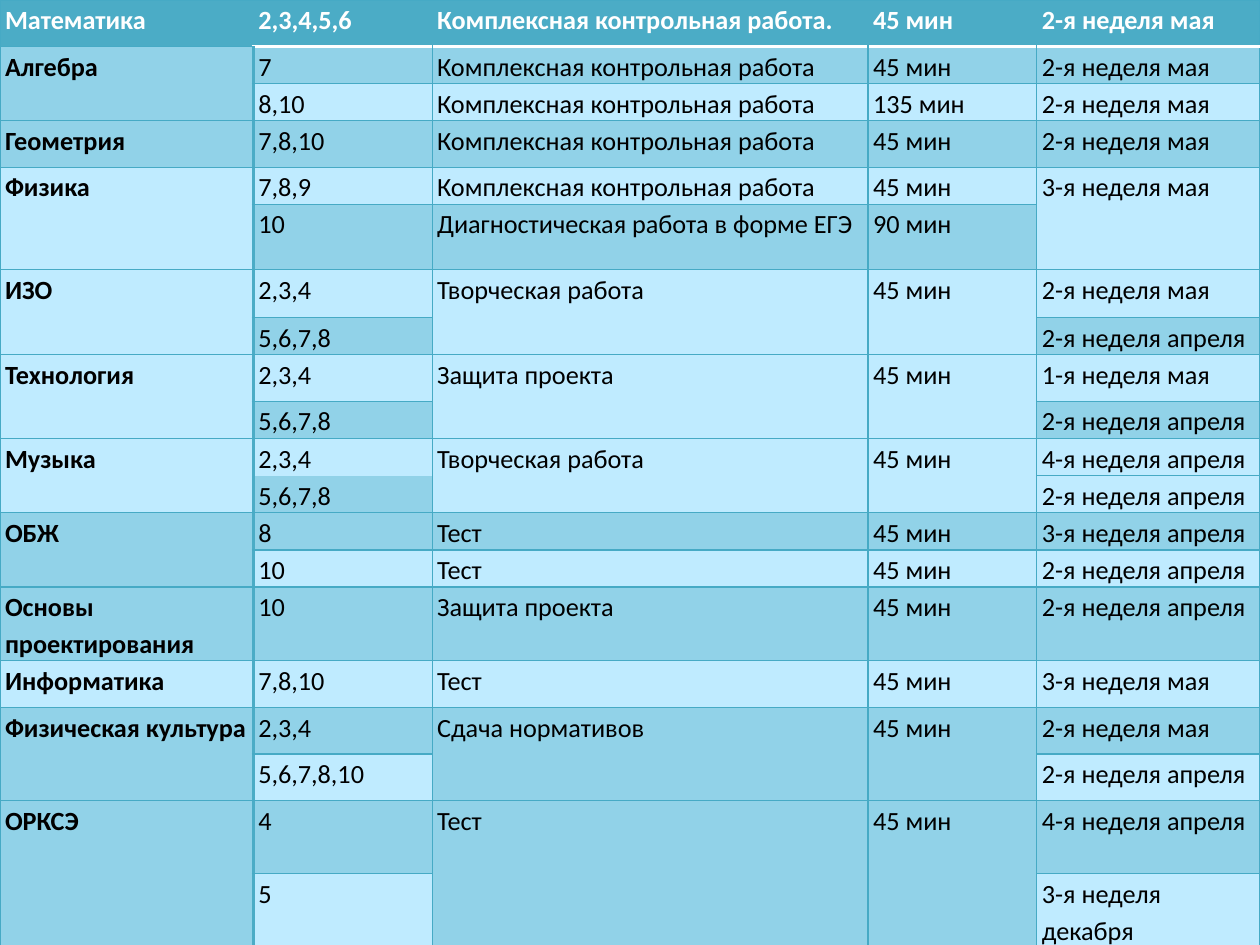
from lxml.etree import SubElement
from pptx import Presentation
from pptx.dml.color import RGBColor
from pptx.oxml.ns import qn
from pptx.util import Inches, Pt

COLUMN_WIDTHS = [2.01, 1.42, 3.46, 1.34, 1.77]
COMPLEX = "Комплексная контрольная работа"
CREATIVE = "Творческая работа"
PROJECT = "Защита проекта"
TEST = "Тест"
LESSON = "45 мин"
MAY_2, MAY_3 = "2-я неделя мая", "3-я неделя мая"
APRIL_2, APRIL_3, APRIL_4 = (f"{week}-я неделя апреля" for week in (2, 3, 4))

# Row height, then subject, grades, kind of work, duration and week;
# None continues the cell above
ROWS = [
    (0.37, "Математика", "2,3,4,5,6", COMPLEX + ".", LESSON, MAY_2),
    (0.29, "Алгебра", "7", COMPLEX, LESSON, MAY_2),
    (0.29, None, "8,10", COMPLEX, "135 мин", MAY_2),
    (0.37, "Геометрия", "7,8,10", COMPLEX, LESSON, MAY_2),
    (0.29, "Физика", "7,8,9", COMPLEX, LESSON, MAY_3),
    (0.52, None, "10", "Диагностическая работа в форме ЕГЭ", "90 мин", None),
    (0.38, "ИЗО", "2,3,4", CREATIVE, LESSON, MAY_2),
    (0.29, None, "5,6,7,8", None, None, APRIL_2),
    (0.37, "Технология", "2,3,4", PROJECT, LESSON, "1-я неделя мая"),
    (0.3, None, "5,6,7,8", None, None, APRIL_2),
    (0.29, "Музыка", "2,3,4", CREATIVE, LESSON, APRIL_4),
    (0, None, "5,6,7,8", None, None, None),
    (0.29, None, None, None, None, APRIL_2),
    (0.29, "ОБЖ", "8", TEST, LESSON, APRIL_3),
    (0.29, None, "10", TEST, LESSON, APRIL_2),
    (0.58, "Основы проектирования", "10", PROJECT, LESSON, APRIL_2),
    (0.37, "Информатика", "7,8,10", TEST, LESSON, MAY_3),
    (0.37, "Физическая культура", "2,3,4", "Сдача нормативов", LESSON, MAY_2),
    (0.37, None, "5,6,7,8,10", None, None, APRIL_2),
    (0.58, "ОРКСЭ", "4", TEST, LESSON, APRIL_4),
    (0.57, None, "5", None, None, "3-я неделя декабря"),
]


def color(value):
    return RGBColor.from_string(value)


class ScheduleSlide:
    font_name = "Calibri"
    font_size = Pt(15)
    line_spacing = 1.15
    header_fill = "4BACC6"
    band_fill = "91D2E8"
    light_fill = "BFEBFF"
    grid_line = ("46AAC5", 0.75)
    subject_line = ("4BACC6", 2)
    header_line = ("FFFFFF", 2)

    def __init__(self, presentation):
        self.slide = presentation.slides.add_slide(presentation.slide_layouts[6])

    def add_table(self, rows, widths):
        heights = [row[0] for row in rows]
        table = self.slide.shapes.add_table(
            len(rows), len(widths), 0, 0, Inches(sum(widths)), Inches(sum(heights))
        ).table
        table.first_row = table.horz_banding = False
        for column, width in zip(table.columns, widths):
            column.width = Inches(width)
        for row, height in zip(table.rows, heights):
            row.height = Inches(height)

        for row_index, (_, *texts) in enumerate(rows):
            for column_index, text in enumerate(texts):
                if text is None:
                    continue
                cell = table.cell(row_index, column_index)
                last = row_index
                while last + 1 < len(rows) and rows[last + 1][column_index + 1] is None:
                    last += 1
                if last > row_index:
                    cell.merge(table.cell(last, column_index))
                self.format_cell(cell, text, row_index, column_index)

    def format_cell(self, cell, text, row_index, column_index):
        is_header, is_subject = row_index == 0, column_index == 0

        # Text
        cell.text = text
        cell.margin_left = cell.margin_right = Inches(0.04)
        cell.margin_top = cell.margin_bottom = 0
        paragraph = cell.text_frame.paragraphs[0]
        paragraph.line_spacing = self.line_spacing
        font = paragraph.font
        font.name, font.size = self.font_name, self.font_size
        font.bold = is_header or is_subject
        font.color.rgb = color("FFFFFF" if is_header else "000000")

        # Borders come before the fill in the cell properties
        sides = dict.fromkeys(("L", "R", "T", "B"), self.grid_line)
        if is_header:
            if not is_subject:
                sides["L"] = None
                sides["B"] = self.header_line
            if column_index < len(COLUMN_WIDTHS) - 1:
                sides["R"] = None
        elif is_subject:
            sides["R"] = self.subject_line
        for side, line in sides.items():
            self.add_border(cell, side, line)

        # Fill
        body_fill = self.band_fill if row_index % 2 else self.light_fill
        cell.fill.solid()
        cell.fill.fore_color.rgb = color(self.header_fill if is_header else body_fill)

    def add_border(self, cell, side, line):
        properties = cell._tc.get_or_add_tcPr()
        border = SubElement(properties, qn(f"a:ln{side}"))
        if line is None:
            border.set("w", "0")
            SubElement(border, qn("a:noFill"))
            return
        line_color, width = line
        border.set("w", str(Pt(width)))
        fill = SubElement(border, qn("a:solidFill"))
        SubElement(fill, qn("a:srgbClr"), val=line_color)


def main():
    presentation = Presentation()
    presentation.slide_width = Inches(10)
    presentation.slide_height = Inches(7.5)
    ScheduleSlide(presentation).add_table(ROWS, COLUMN_WIDTHS)
    presentation.save("out.pptx")


if __name__ == "__main__":
    main()
